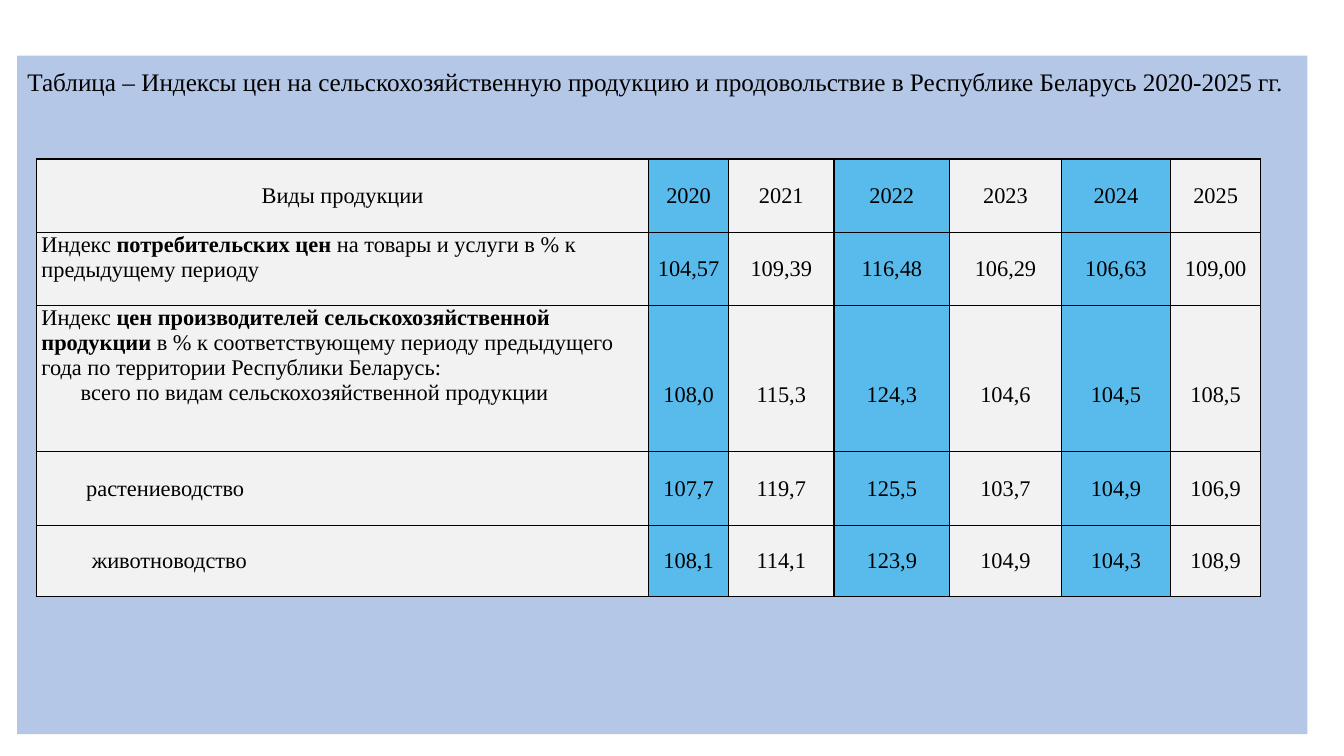
from lxml.etree import SubElement
from pptx import Presentation
from pptx.dml.color import RGBColor
from pptx.enum.text import MSO_ANCHOR, MSO_AUTO_SIZE, PP_ALIGN
from pptx.oxml import parse_xml
from pptx.oxml.ns import nsdecls, qn
from pptx.util import Pt

BLACK = RGBColor(0x00, 0x00, 0x00)
PANEL_BLUE = RGBColor(0xB4, 0xC7, 0xE7)
YEAR_BLUE = RGBColor(0x00, 0xB0, 0xF0)
LIGHT_GREY = RGBColor(0xF2, 0xF2, 0xF2)


def write(paragraph, text, size=16, align=PP_ALIGN.LEFT, indent=0):
    properties = paragraph._p.get_or_add_pPr()
    properties.set("marL", str(Pt(indent)))
    properties.set("indent", "0")
    paragraph.alignment = align
    for part, piece in enumerate(text.split("**")):
        run = paragraph.add_run()
        run.text = piece
        run.font.name = "Times New Roman"
        run.font.size = Pt(size)
        run.font.bold = part % 2 == 1
        run.font.color.rgb = BLACK


def style_cell(cell, color, alpha=None):
    properties = cell._tc.get_or_add_tcPr()
    for side in ("lnL", "lnR", "lnT", "lnB"):
        properties.append(parse_xml(
            f'<a:{side} {nsdecls("a")} w="{Pt(1)}"><a:solidFill>'
            f'<a:srgbClr val="{BLACK}"/></a:solidFill></a:{side}>'))
    cell.fill.solid()
    cell.fill.fore_color.rgb = color
    if alpha:
        tint = properties.find(qn("a:solidFill")).find(qn("a:srgbClr"))
        SubElement(tint, qn("a:alpha")).set("val", str(alpha * 1000))


presentation = Presentation()
presentation.slide_width = Pt(960)
presentation.slide_height = Pt(540)
slide = presentation.slides.add_slide(presentation.slide_layouts[5])

heading = slide.shapes.title
heading.left, heading.top, heading.width, heading.height = Pt(12.3), Pt(39.8), Pt(921.6), Pt(484.6)
heading.fill.solid()
heading.fill.fore_color.rgb = PANEL_BLUE
heading_frame = heading.text_frame
heading_frame.word_wrap = True
heading_frame.auto_size = MSO_AUTO_SIZE.NONE
heading_frame.vertical_anchor = MSO_ANCHOR.TOP
heading_frame.margin_top = Pt(7.5)
write(heading_frame.paragraphs[0],
      "Таблица – Индексы цен на сельскохозяйственную продукцию и продовольствие "
      "в Республике Беларусь 2020-2025 гг.",
      size=18, align=PP_ALIGN.JUSTIFY)

price_rows = [
    ([("Виды продукции", 0)],
     ["2020", "2021", "2022", "2023", "2024", "2025"]),
    ([("Индекс **потребительских цен** на товары и услуги в % к предыдущему периоду", 0)],
     ["104,57", "109,39", "116,48", "106,29", "106,63", "109,00"]),
    ([("Индекс **цен производителей сельскохозяйственной продукции** в % к соответствующему "
       "периоду предыдущего года по территории Республики Беларусь:", 0),
      ("всего по видам сельскохозяйственной продукции", 28)],
     ["108,0", "115,3", "124,3", "104,6", "104,5", "108,5"]),
    ([("растениеводство", 32)],
     ["107,7", "119,7", "125,5", "103,7", "104,9", "106,9"]),
    ([("животноводство", 36)],
     ["108,1", "114,1", "123,9", "104,9", "104,3", "108,9"]),
]
column_widths = [437.4, 57, 75.4, 82.6, 79.8, 78, 64.5]
row_heights = [52.4, 52.4, 104.4, 52.4, 51]
HEADER_ROW, CONSUMER_ROW, PRODUCER_ROW = 0, 1, 2

prices = slide.shapes.add_table(
    len(row_heights), len(column_widths), Pt(26), Pt(113.6),
    Pt(sum(column_widths)), Pt(sum(row_heights))).table
for column, width in zip(prices.columns, column_widths):
    column.width = Pt(width)
for row, height in zip(prices.rows, row_heights):
    row.height = Pt(height)

for row_number, (label_lines, values) in enumerate(price_rows):
    label = prices.cell(row_number, 0)
    style_cell(label, LIGHT_GREY)
    label.margin_left = label.margin_right = Pt(3.6)
    label.margin_top = label.margin_bottom = 0
    top_aligned = row_number in (CONSUMER_ROW, PRODUCER_ROW)
    label.vertical_anchor = MSO_ANCHOR.TOP if top_aligned else MSO_ANCHOR.MIDDLE
    label_align = PP_ALIGN.CENTER if row_number == HEADER_ROW else PP_ALIGN.LEFT
    for line_number, (line, indent) in enumerate(label_lines):
        paragraph = label.text_frame.add_paragraph() if line_number else label.text_frame.paragraphs[0]
        write(paragraph, line, align=label_align, indent=indent)

    for year_number, value in enumerate(values):
        index = prices.cell(row_number, year_number + 1)
        if year_number % 2 == 0:
            style_cell(index, YEAR_BLUE, alpha=50)
        else:
            style_cell(index, LIGHT_GREY)
        index.margin_left = index.margin_right = Pt(0.7)
        index.margin_top = index.margin_bottom = 0
        index.vertical_anchor = MSO_ANCHOR.MIDDLE
        if row_number == PRODUCER_ROW:
            index.vertical_anchor = MSO_ANCHOR.TOP
            index.margin_top = Pt(54.5)
        write(index.text_frame.paragraphs[0], value, align=PP_ALIGN.CENTER)

presentation.save("out.pptx")
